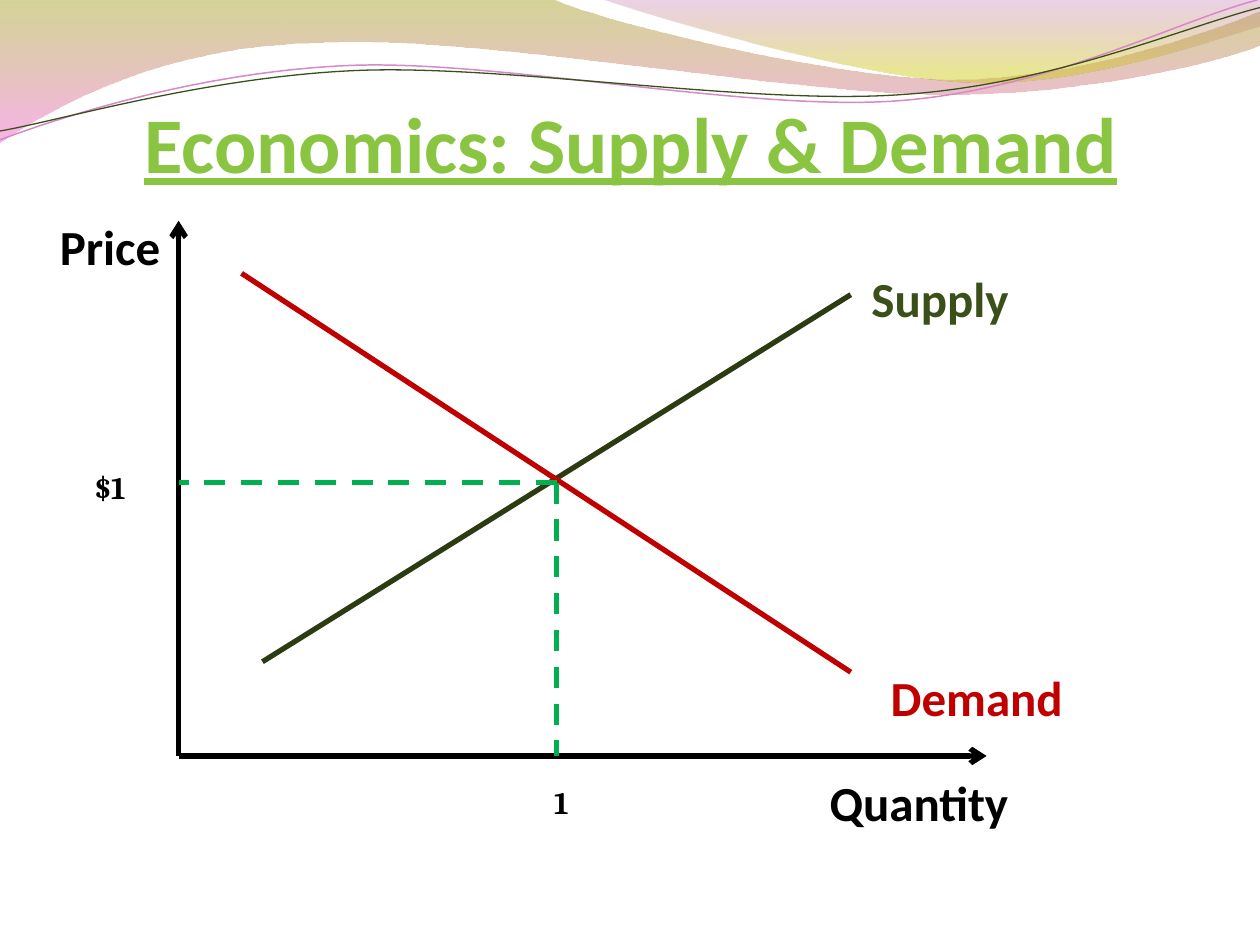
from collections import namedtuple
from dataclasses import dataclass

from lxml.etree import SubElement
from pptx import Presentation
from pptx.dml.color import RGBColor as RGB
from pptx.enum.dml import MSO_LINE_DASH_STYLE as Dash
from pptx.enum.shapes import MSO_CONNECTOR as Conn
from pptx.enum.text import MSO_ANCHOR as Anchor, MSO_AUTO_SIZE as AutoSize, PP_ALIGN as Align
from pptx.oxml import parse_xml
from pptx.oxml.ns import nsdecls, qn
from pptx.util import Cm, Pt

Box = namedtuple("Box", "x y w h")


@dataclass(frozen=True)
class Theme:
    title: str = "89C540"
    axis: str = "000000"
    supply: str = "3B4F18"
    supply_line: str = "2C3B11"
    demand: str = "C00000"
    guide: str = "00B050"
    pink_line: str = "D788C7"
    wide_wave: tuple = ((0, "A29F1B", 45), (100, "F475D9", 55))
    right_wave: tuple = ((0, "BE68AC", 30), (80, "CFCA13", 45))
    font: str = "Calibri"
    value_font: str = "Cambria"
    title_size: int = 45
    label_size: int = 28
    value_size: int = 18
    line_width: int = 3


T = Theme()


def write(tf, text, size, color, font, underline=None):
    p = tf.paragraphs[0]
    p.alignment = Align.CENTER
    r = p.add_run()
    r.text = text
    formats = {"size": Pt(size), "name": font, "bold": True, "underline": underline}
    for name, value in formats.items():
        setattr(r.font, name, value)
    r.font.color.rgb = RGB.from_string(color)


def add_curve(s, box, parts, closed):
    unit = box.w / 10
    points = [(Cm(box.x + x * unit), Cm(box.y + y * unit))
              for part in parts for x, y in zip(part[::2], part[1::2])]
    builder = s.shapes.build_freeform(*points[0])
    builder.add_line_segments(points[1:], close=closed)
    sp = builder.convert_to_shape()
    sp.shadow.inherit = False
    segments = iter(list(sp._element.iter(qn("a:lnTo"))))
    for part in parts[1:]:
        first = next(segments)
        if len(part) == 6:
            first.tag = qn("a:cubicBezTo")
            for extra in (next(segments), next(segments)):
                first.append(extra[0])
                extra.getparent().remove(extra)
    return sp


def move_to_layout(s, sp):
    shapes = s.slide_layout.shapes
    sp._element.nvSpPr.cNvPr.id = 10 + len(shapes)
    shapes._spTree.append(sp._element)


def add_wave(s, box, parts, stops):
    sp = add_curve(s, box, parts, True)
    sp.line.fill.background()
    gs = "".join(
        f'<a:gs pos="{pos * 1000}"><a:srgbClr val="{color}">'
        f'<a:alpha val="{alpha * 1000}"/></a:srgbClr></a:gs>'
        for pos, color, alpha in stops)
    grad = parse_xml(f'<a:gradFill {nsdecls("a")}><a:gsLst>{gs}</a:gsLst>'
                     '<a:lin ang="5400000" scaled="0"/></a:gradFill>')
    sp._element.spPr.find(qn("a:custGeom")).addnext(grad)
    move_to_layout(s, sp)


def add_strand(s, box, parts, color, width):
    sp = add_curve(s, box, parts, False)
    sp.fill.background()
    sp.line.color.rgb = RGB.from_string(color)
    sp.line.width = Pt(width)
    move_to_layout(s, sp)


def add_waves(s, box):
    add_wave(s, box, [
        (0, 0), (4.4, 0), (4.76, 0.17, 6.64, 0.63, 7.58, 0.63),
        (8.53, 0.63, 9.58, 0.26, 10, 0.09), (10, 0.36),
        (9.83, 0.44, 8.7, 0.76, 7.46, 0.75), (6.22, 0.75, 3.82, 0.28, 2.57, 0.34),
        (1.29, 0.36, 0.46, 0.83, 0, 1.13)], T.wide_wave)
    add_wave(s, box, [
        (4.79, 0), (5.09, 0.11, 6.82, 0.62, 7.69, 0.65),
        (8.56, 0.69, 9.61, 0.32, 10, 0.21), (10, 0)], T.right_wave)
    add_strand(s, box, [
        (0, 1.11), (0.48, 0.93, 1.58, 0.57, 2.77, 0.52),
        (3.95, 0.47, 5.93, 0.89, 7.13, 0.8),
        (8.33, 0.71, 9.38, 0.15, 9.98, 0)], T.pink_line, 0.85)
    add_strand(s, box, [
        (0, 1.04), (0.47, 0.96, 1.64, 0.61, 2.83, 0.56),
        (4.03, 0.51, 5.97, 0.84, 7.17, 0.75),
        (8.36, 0.67, 9.41, 0.21, 10, 0.06)], T.supply, 0.75)


def place_title(s, box, text):
    sp = s.shapes.title
    sp.left, sp.top, sp.width, sp.height = map(Cm, box)
    tf = sp.text_frame
    formats = {"vertical_anchor": Anchor.BOTTOM, "word_wrap": True, "auto_size": AutoSize.NONE,
               "margin_left": 0, "margin_top": Cm(0.13), "margin_right": 0, "margin_bottom": 0}
    for name, value in formats.items():
        setattr(tf, name, value)
    write(tf, text, T.title_size, T.title, T.font, True)


def add_line(s, box, start, end, color, dash=None, arrow=False):
    ends = [Cm(o + d) for point in (start, end) for o, d in zip((box.x, box.y), point)]
    cx = s.shapes.add_connector(Conn.STRAIGHT, *ends)
    cx.line.color.rgb = RGB.from_string(color)
    cx.line.width = Pt(T.line_width)
    if dash:
        cx.line.dash_style = dash
    if arrow:
        SubElement(cx.line._get_or_add_ln(), qn("a:tailEnd"), type="arrow")
    SubElement(cx._element.spPr, qn("a:effectLst"))


def add_label(s, box, text, place, size, color, font):
    x, y, w, h = place
    tf = s.shapes.add_textbox(*map(Cm, (box.x + x, box.y + y, w, h))).text_frame
    tf.word_wrap = True
    tf.auto_size = AutoSize.SHAPE_TO_FIT_TEXT
    write(tf, text, size, color, font)


def add_market(s, box):
    origin, balance = (0, box.h), (7.62, 5.28)
    for end in ((0, 0), (box.w, box.h)):
        add_line(s, box, origin, end, T.axis, arrow=True)
    add_line(s, box, (1.69, 8.89), (13.55, 1.49), T.supply_line)
    add_line(s, box, (1.27, 1.06), (13.55, 9.1), T.demand)
    for end in ((0, balance[1]), (balance[0], box.h)):
        add_line(s, box, balance, end, T.guide, dash=Dash.DASH)

    label_h, value_w, value_h = 1.45, 3.15, 1.02
    for text, x, y, w, color in (
            ("Price", -2.97, -0.2, 3.18, T.axis),
            ("Quantity", 12.7, 11, 4.45, T.axis),
            ("Demand", 13.55, 8.89, 5.08, T.demand),
            ("Supply", 13.55, 0.84, 3.6, T.supply)):
        add_label(s, box, text, (x, y, w, label_h), T.label_size, color, T.font)
    for text, x, y in (("$1", -2.96, 4.87), ("1", 6.14, 11.22)):
        add_label(s, box, text, (x, y, value_w, value_h), T.value_size, T.axis, T.value_font)


def main():
    prs = Presentation()
    prs.slide_width, prs.slide_height = Cm(25.4), Cm(19.05)
    s = prs.slides.add_slide(prs.slide_layouts[5])
    add_waves(s, Box(0, 0, 25.4, 2.9))
    place_title(s, Box(2.34, 0.64, 20.75, 3.18), "Economics: Supply & Demand")
    add_market(s, Box(3.6, 4.45, 16.29, 10.79))
    prs.save("out.pptx")


if __name__ == "__main__":
    main()
